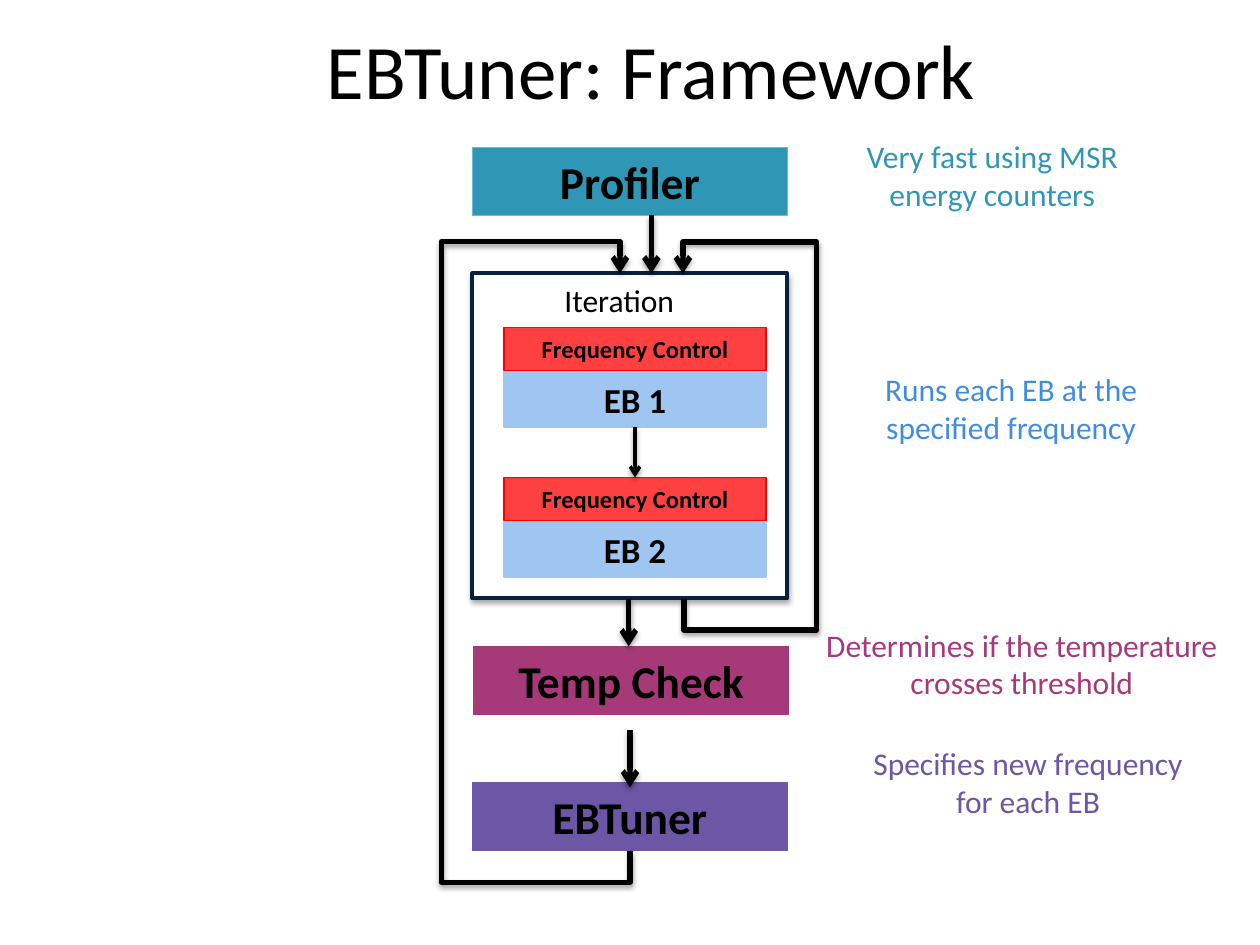
import lxml.etree
import pptx
import pptx.dml.color
import pptx.enum.shapes
import pptx.enum.text
import pptx.oxml
import pptx.oxml.ns
import pptx.util

Inches = pptx.util.Inches
COLORS = {
    "black": "000000", "white": "FFFFFF", "navy": "09213B",
    "teal": "2F97B5", "light teal": "6FB7D7", "pale blue": "9FC6F0",
    "blue": "3F8DE2", "red": "FF4040", "red edge": "FF0000",
    "magenta": "A63A79", "purple": "6C56A6",
}


def rgb(name):
    """Return the named color."""
    return pptx.dml.color.RGBColor.from_string(COLORS[name])


def write_text(frame, text, size=18, color="black", bold=False, font="Calibri", grow=True):
    """Write one centred paragraph into a text frame."""
    frame.word_wrap = True
    frame.vertical_anchor = pptx.enum.text.MSO_ANCHOR.MIDDLE
    sizes = pptx.enum.text.MSO_AUTO_SIZE
    frame.auto_size = sizes.SHAPE_TO_FIT_TEXT if grow else sizes.NONE
    paragraph = frame.paragraphs[0]
    paragraph.alignment = pptx.enum.text.PP_ALIGN.CENTER
    run = paragraph.add_run()
    run.text = text
    run.font.name = font
    run.font.size = pptx.util.Pt(size)
    run.font.bold = bold
    run.font.color.rgb = rgb(color)


def add_shadow(shape, opacity, distance):
    """Give a shape a soft shadow below it."""
    shape._element.spPr.append(pptx.oxml.parse_xml(
        f'<a:effectLst {pptx.oxml.ns.nsdecls("a")}>'
        f'<a:outerShdw blurRad="{pptx.util.Pt(3.1)}" dist="{pptx.util.Pt(distance)}" '
        'dir="5400000" rotWithShape="0"><a:srgbClr val="000000">'
        f'<a:alpha val="{opacity * 1000}"/></a:srgbClr></a:outerShdw></a:effectLst>'))


class FlowSlide:
    """Hold the slide and the style of its flow chart."""

    def __init__(self, slide, arrow_width=3):
        """Keep the slide and the usual arrow width."""
        self.slide = slide
        self.arrow_width = arrow_width

    def label(self, text, left, top, width, height, **style):
        """Add a text box."""
        shape = self.slide.shapes.add_textbox(
            Inches(left), Inches(top), Inches(width), Inches(height))
        write_text(shape.text_frame, text, **style)

    def box(self, left, top, width, height, fill, edge, line_width=0.75, text=None, size=26):
        """Add a rectangle, with bold text if given."""
        shape = self.slide.shapes.add_shape(
            pptx.enum.shapes.MSO_SHAPE.RECTANGLE,
            Inches(left), Inches(top), Inches(width), Inches(height))
        shape.shadow.inherit = False
        shape.fill.solid()
        shape.fill.fore_color.rgb = rgb(fill)
        shape.line.color.rgb = rgb(edge)
        shape.line.width = pptx.util.Pt(line_width)
        if text:
            write_text(shape.text_frame, text, size=size, bold=True)
        return shape

    def frame(self, *place):
        """Add the shadowed frame around the iteration."""
        shape = self.box(*place, "white", "navy", line_width=2.25)
        spPr = shape._element.spPr
        spPr.remove(spPr.find(pptx.oxml.ns.qn("a:effectLst")))
        add_shadow(shape, 35, 1.8)

    def arrow(self, begin, end, width=None, kind="STRAIGHT"):
        """Add an arrow between two points."""
        connector = self.slide.shapes.add_connector(
            pptx.enum.shapes.MSO_CONNECTOR[kind], *map(Inches, begin + end))
        connector.line.color.rgb = rgb("black")
        connector.line.width = pptx.util.Pt(width or self.arrow_width)
        lxml.etree.SubElement(
            connector.line._get_or_add_ln(), pptx.oxml.ns.qn("a:tailEnd"), type="arrow")
        add_shadow(connector, 38, 1.6)
        return connector

    def loop(self, begin, end, side, lead=0.25):
        """Add an arrow that leaves downward, rises along side and enters from above."""
        qn = pptx.oxml.ns.qn
        connector = self.arrow(begin, end, kind="ELBOW")
        across, rise = begin[0] - end[0], begin[1] - end[1]
        spPr = connector._element.spPr
        xfrm = spPr.find(qn("a:xfrm"))
        xfrm.attrib.pop("flipV", None)
        xfrm.set("rot", "5400000")
        xfrm.set("flipH", "1")
        connector.left = Inches((begin[0] + end[0] - rise) / 2)
        connector.top = Inches((begin[1] + end[1] - across) / 2)
        connector.width, connector.height = Inches(rise), Inches(across)
        geometry = spPr.find(qn("a:prstGeom"))
        geometry.set("prst", "bentConnector5")
        guides = geometry.find(qn("a:avLst"))
        if guides is None:
            guides = lxml.etree.SubElement(geometry, qn("a:avLst"))
        ratios = (-lead / rise, (begin[0] - side) / across, 1 + lead / rise)
        for number, ratio in enumerate(ratios, 1):
            lxml.etree.SubElement(
                guides, qn("a:gd"), name=f"adj{number}", fmla=f"val {round(ratio * 100000)}")


def main():
    """Build the framework slide."""
    presentation = pptx.Presentation()
    presentation.slide_width, presentation.slide_height = Inches(10), Inches(7.5)
    flow = FlowSlide(presentation.slides.add_slide(presentation.slide_layouts[6]))

    flow.label("EBTuner: Framework", 0.67, -0.08, 9, 1.25, size=44, grow=False)
    flow.frame(3.75, 2.17, 2.5, 2.58)
    flow.label("Iteration", 4, 2.17, 1.83, 0.42)
    for number, top in enumerate((2.6, 3.79), 1):
        flow.box(4, top + 0.35, 2.08, 0.44, "pale blue", "pale blue",
                 text=f"EB {number}", size=20)
        flow.box(4, top, 2.08, 0.34, "red", "red edge", text="Frequency Control", size=14)

    for text, left, top, fill, edge in (
        ("Profiler", 3.75, 1.17, "teal", "light teal"),
        ("Temp Check", 3.76, 5.13, "magenta", "magenta"),
        ("EBTuner", 3.75, 6.21, "purple", "purple"),
    ):
        flow.box(left, top, 2.5, 0.54, fill, edge, text=text)

    for x, top, bottom, width in (
        (5.17, 1.71, 2.17, 3), (5.04, 3.39, 3.79, 2),
        (4.99, 4.75, 5.13, 3), (5, 5.79, 6.25, 3),
    ):
        flow.arrow((x, top), (x, bottom), width)
    flow.loop((5, 6.75), (4.92, 2.17), side=3.5)
    flow.loop((5.43, 4.75), (5.42, 2.17), side=6.5)

    for text, left, top, width, color in (
        ("Very fast using MSR energy counters", 6.75, 1.03, 2.25, "teal"),
        ("Runs each EB at the specified frequency", 6.9, 2.88, 2.25, "blue"),
        ("Determines if the temperature crosses threshold", 6.4, 4.91, 3.42, "magenta"),
        ("Specifies new frequency for each EB", 6.71, 5.85, 2.9, "purple"),
    ):
        flow.label(text, left, top, width, 0.71, color=color)
    presentation.save("out.pptx")


if __name__ == "__main__":
    main()
